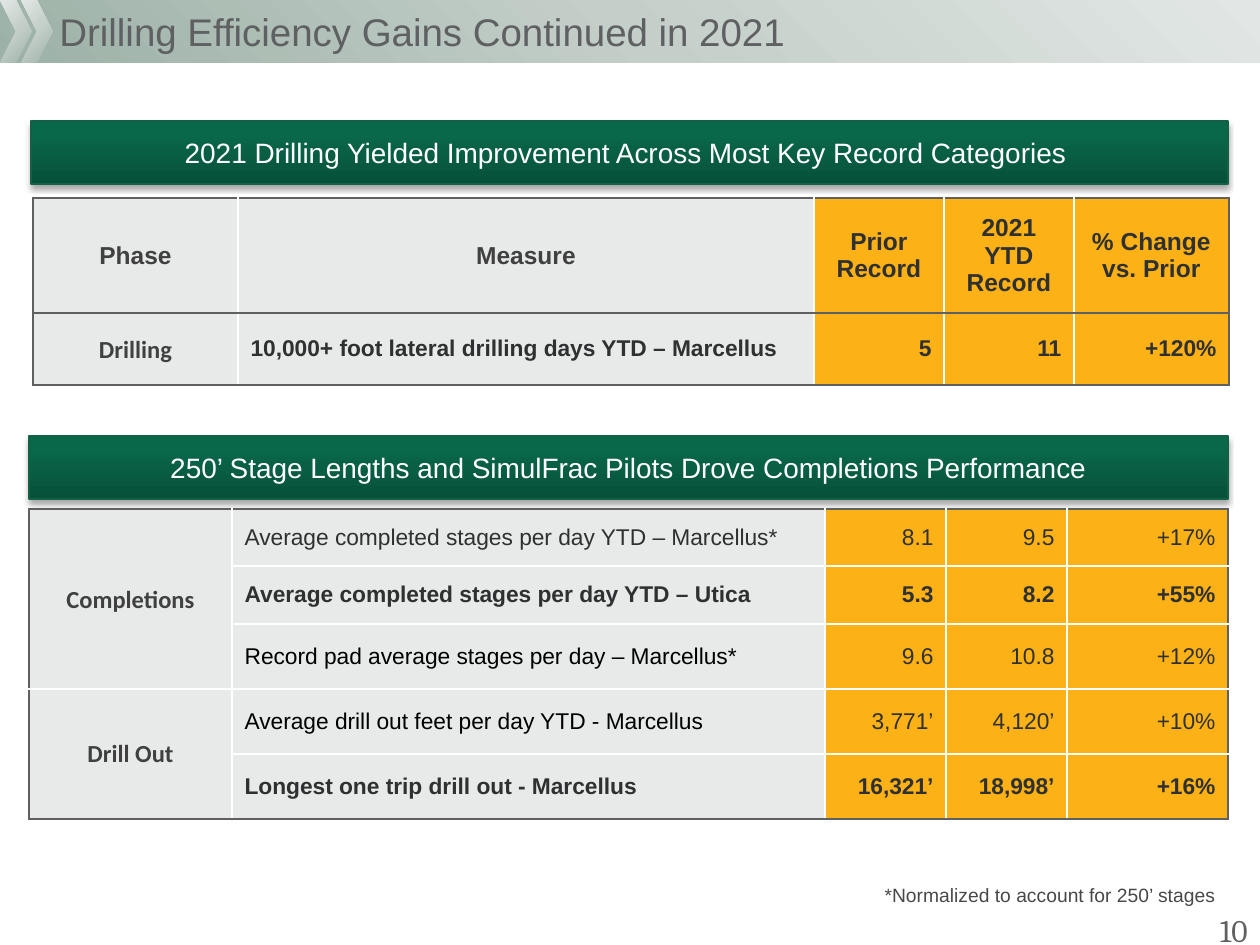
from dataclasses import dataclass

from lxml import etree
from pptx import Presentation
from pptx import util as u
from pptx.dml.color import RGBColor
from pptx.enum import shapes, text
from pptx.oxml import ns

PX = 914400 / 126
LEFT, CENTER, RIGHT = text.PP_ALIGN.LEFT, text.PP_ALIGN.CENTER, text.PP_ALIGN.RIGHT


@dataclass(frozen=True)
class Theme:
    grey: str = "5F6062"
    label: str = "404040"
    ink: str = "2F3031"
    black: str = "000000"
    white: str = "FFFFFF"
    note: str = "47484A"
    pale: str = "E7EAE9"
    amber: str = "FCB216"
    band_line: str = "136047"
    mist: tuple = ((0, "9CB1A7"), (50, "C4CFC9"), (100, "E2E7E5"))
    green: tuple = ((0, "075039"), (80, "09684A"), (100, "086A4B"))
    title_size: int = 22
    number_size: int = 18
    band_size: int = 16
    head_size: int = 14
    body_size: int = 13
    note_size: int = 11


THEME = Theme()


def px(length):
    return u.Emu(round(length * PX))


def add_element(parent, tag, **attributes):
    element = etree.SubElement(parent, ns.qn(tag))
    for name, value in attributes.items():
        element.set(name, str(value))
    return element


def set_gradient(shape, stops, angle=None):
    shape.fill.background()
    properties = shape._element.spPr
    gradient = etree.Element(ns.qn("a:gradFill"), rotWithShape="1")
    stop_list = add_element(gradient, "a:gsLst")
    for position, color in stops:
        stop = add_element(stop_list, "a:gs", pos=position * 1000)
        add_element(stop, "a:srgbClr", val=color)
    if angle is None:
        circle = add_element(gradient, "a:path", path="circle")
        add_element(circle, "a:fillToRect", t=100000, r=100000)
    else:
        add_element(gradient, "a:lin", ang=angle * 60000, scaled=0)
    properties.replace(properties.find(ns.qn("a:noFill")), gradient)


def add_gradient_shape(slide, kind, box, stops, angle=None):
    shape = slide.shapes.add_shape(kind, *map(px, box))
    shape.shadow.inherit = False
    shape.line.fill.background()
    set_gradient(shape, stops, angle)
    return shape


def write(frame, content, size, color, align=LEFT, font="Arial", bold=False):
    frame.text = content
    for paragraph in frame.paragraphs:
        paragraph.alignment = align
        paragraph.font.color.rgb = RGBColor.from_string(color)
        for name, value in {"name": font, "size": u.Pt(size), "bold": bold}.items():
            setattr(paragraph.font, name, value)


def add_text(slide, box, content, size, color, anchor=text.MSO_ANCHOR.MIDDLE, **style):
    frame = slide.shapes.add_textbox(*map(px, box)).text_frame
    frame.word_wrap = True
    frame.vertical_anchor = anchor
    write(frame, content, size, color, **style)


def add_band(slide, box, content):
    shape = add_gradient_shape(slide, shapes.MSO_SHAPE.RECTANGLE, box, THEME.green, 270)
    shape.line.color.rgb = RGBColor.from_string(THEME.band_line)
    shape.line.width = u.Pt(0.75)
    effects = shape._element.spPr.find(ns.qn("a:effectLst"))
    shadow = add_element(effects, "a:outerShdw", blurRad=u.Pt(3.1), dist=u.Pt(1.8),
                         dir=90 * 60000, algn="t", rotWithShape=0)
    shade = add_element(shadow, "a:srgbClr", val=THEME.black)
    add_element(shade, "a:alpha", val=35000)
    shape.text_frame.word_wrap = True
    shape.text_frame.vertical_anchor = text.MSO_ANCHOR.MIDDLE
    write(shape.text_frame, content, THEME.band_size, THEME.white, CENTER)


def set_borders(cell, **colors):
    properties = cell._tc.get_or_add_tcPr()
    for side in "LRTB":
        line = add_element(properties, f"a:ln{side}", w=u.Pt(1))
        add_element(add_element(line, "a:solidFill"), "a:srgbClr", val=colors[side])


def format_cell(cell, is_tight, is_amber):
    cell.vertical_anchor = text.MSO_ANCHOR.MIDDLE
    cell.fill.solid()
    cell.fill.fore_color.rgb = RGBColor.from_string(THEME.amber if is_amber else THEME.pale)
    if is_tight:
        for side in ("left", "top", "right"):
            setattr(cell, f"margin_{side}", u.Inches(0.01))
        cell.margin_bottom = 0


def add_grid(slide, left, top, widths, heights, rows, rule_color, spans=(), has_header=False):
    box = (left, top, sum(widths), sum(heights))
    table = slide.shapes.add_table(len(heights), len(widths), *map(px, box)).table
    table.first_row = table.horz_banding = False
    for column, width in zip(table.columns, widths):
        column.width = px(width)
    for row, height in zip(table.rows, heights):
        row.height = px(height)
    for first, last in spans:
        table.cell(first, 0).merge(table.cell(last, 0))
    for r, (values, is_bold, measure_color) in enumerate(rows):
        for c, value in enumerate(values):
            cell = table.cell(r, c)
            if cell.is_spanned:
                continue
            is_header = has_header and r == 0
            bottom = r + (cell.span_height if cell.is_merge_origin else 1)
            set_borders(cell,
                        L=THEME.white if c else THEME.grey,
                        R=THEME.grey if c == len(widths) - 1 else THEME.white,
                        T=rule_color if r else THEME.grey,
                        B=THEME.grey if bottom == len(heights) else rule_color)
            format_cell(cell, c == 0 or is_header and c == 1, c > 1)
            if is_header:
                style = (THEME.head_size, THEME.ink if c > 1 else THEME.label, CENTER, "Arial", True)
            elif c == 0:
                style = (THEME.head_size, THEME.label, CENTER, "Calibri", True)
            elif c == 1:
                style = (THEME.body_size, measure_color, LEFT, "Arial", is_bold)
            else:
                style = (THEME.body_size, THEME.ink, RIGHT, "Arial", is_bold)
            write(cell.text_frame, value, *style)


def add_header(slide):
    add_gradient_shape(slide, shapes.MSO_SHAPE.RECTANGLE, (0, 0, 1260, 63), THEME.mist)
    for left in (0, 21):
        add_gradient_shape(slide, shapes.MSO_SHAPE.CHEVRON, (left, 0, 32, 63), THEME.mist, 225)
    add_text(slide, (47, 0, 1109, 63), "Drilling Efficiency Gains Continued in 2021",
             THEME.title_size, THEME.grey)


def main():
    presentation = Presentation()
    presentation.slide_width, presentation.slide_height = px(1260), px(945)
    slide = presentation.slides.add_slide(presentation.slide_layouts[6])
    add_header(slide)

    drilling = [
        (("Phase", "Measure", "Prior\nRecord", "2021 YTD\nRecord", "% Change\nvs. Prior"),
         True, THEME.label),
        (("Drilling", "10,000+ foot lateral drilling days YTD – Marcellus", "5", "11", "+120%"),
         True, THEME.ink),
    ]
    completions = [
        (("Completions", "Average completed stages per day YTD – Marcellus*", "8.1", "9.5", "+17%"),
         False, THEME.ink),
        (("", "Average completed stages per day YTD – Utica", "5.3", "8.2", "+55%"),
         True, THEME.ink),
        (("", "Record pad average stages per day – Marcellus*", "9.6", "10.8", "+12%"),
         False, THEME.black),
        (("Drill Out", "Average drill out feet per day YTD - Marcellus", "3,771’", "4,120’", "+10%"),
         False, THEME.black),
        (("", "Longest one trip drill out - Marcellus", "16,321’", "18,998’", "+16%"),
         True, THEME.ink),
    ]
    add_grid(slide, 33, 198, (205, 576, 130, 130, 155), (115, 72), drilling,
             THEME.grey, has_header=True)
    add_text(slide, (966, 914, 294, 31), "10", THEME.number_size, THEME.grey,
             align=RIGHT, font="Cambria")
    add_band(slide, (31, 121, 1197, 63),
             "2021 Drilling Yielded Improvement Across Most Key Record Categories ")
    add_band(slide, (29, 436, 1199, 63),
             "250’ Stage Lengths and SimulFrac Pilots Drove Completions Performance")
    add_grid(slide, 29, 509, (203, 593, 121, 121, 161), (57, 58, 65, 65, 65), completions,
             THEME.white, spans=((0, 2), (3, 4)))
    add_text(slide, (766, 877, 462, 36), "*Normalized to account for 250’ stages",
             THEME.note_size, THEME.note, text.MSO_ANCHOR.TOP, align=RIGHT)
    presentation.save("out.pptx")


if __name__ == "__main__":
    main()
